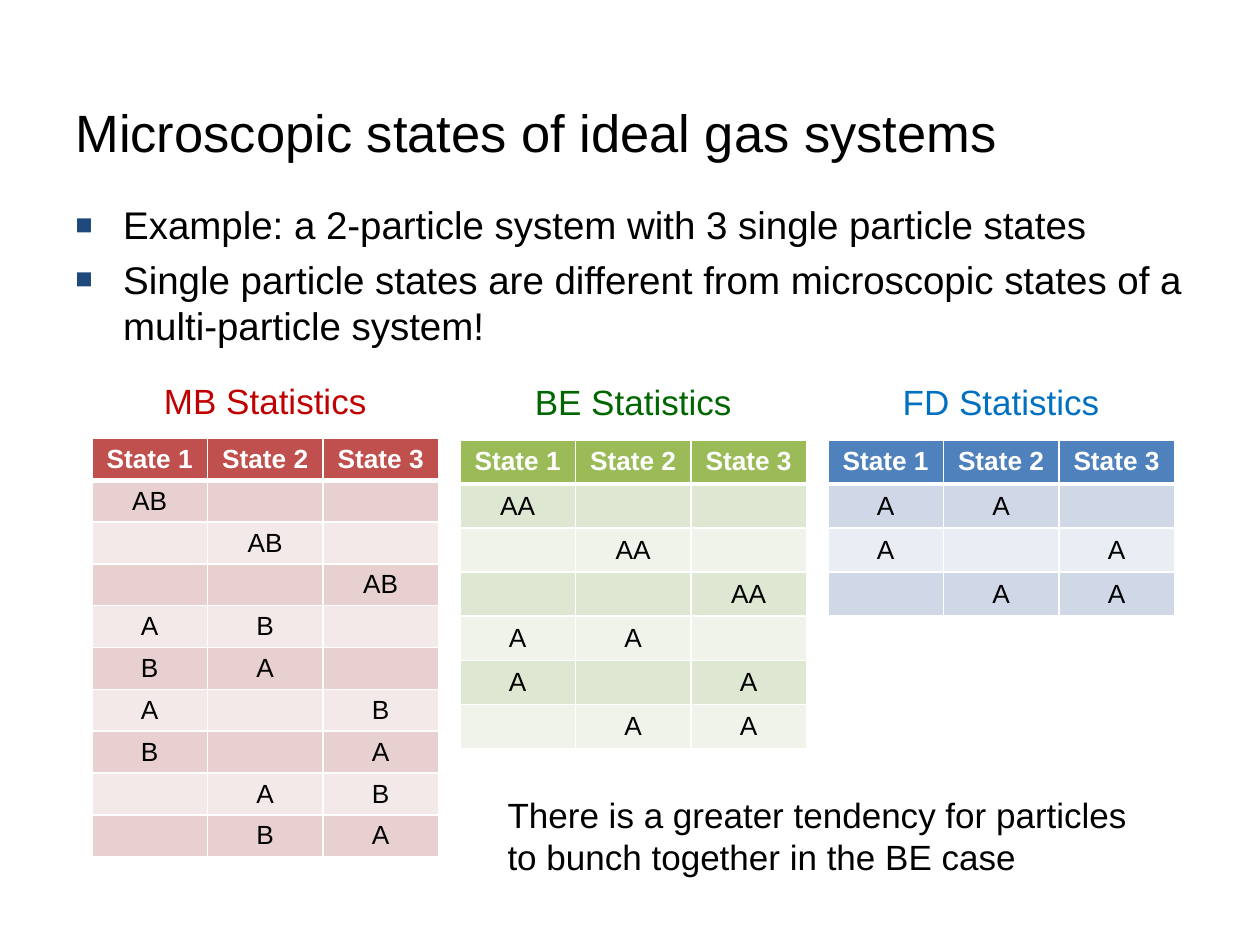
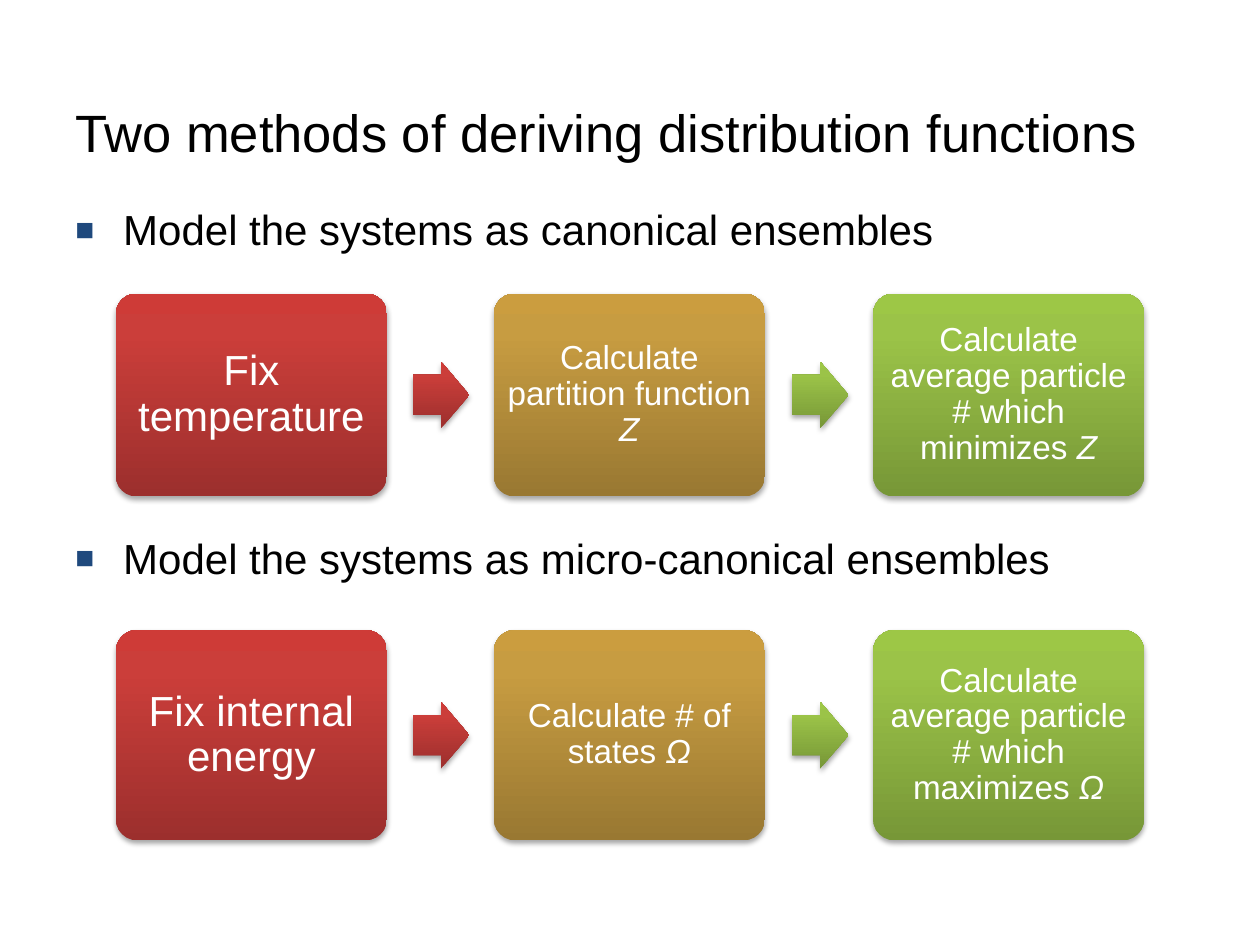
from lxml.etree import SubElement
from pptx import Presentation
from pptx.dml.color import RGBColor
from pptx.enum.shapes import MSO_SHAPE
from pptx.enum.text import MSO_ANCHOR, PP_ALIGN
from pptx.oxml import parse_xml
from pptx.oxml.ns import nsdecls, qn
from pptx.util import Inches, Pt

FONT = "Arial"
BLACK = RGBColor(0x00, 0x00, 0x00)
WHITE = RGBColor(0xFF, 0xFF, 0xFF)
BULLET_BLUE = RGBColor(0x1F, 0x49, 0x7D)
MB_RED = RGBColor(0xC0, 0x00, 0x00)
BE_GREEN = RGBColor(0x00, 0x66, 0x00)
FD_BLUE = RGBColor(0x00, 0x70, 0xC0)
# Table colours: header, odd rows, even rows
RED_BANDS = (RGBColor(0xC0, 0x50, 0x4D), RGBColor(0xE8, 0xD0, 0xD0), RGBColor(0xF4, 0xE9, 0xE9))
GREEN_BANDS = (RGBColor(0x9B, 0xBB, 0x59), RGBColor(0xDE, 0xE7, 0xD1), RGBColor(0xEF, 0xF3, 0xEA))
BLUE_BANDS = (RGBColor(0x4F, 0x81, 0xBD), RGBColor(0xD0, 0xD8, 0xE8), RGBColor(0xE9, 0xED, 0xF4))
# Gradient colours from bottom to top, at 0, 80 and 100 percent
RED_STEP = (RGBColor(0x9C, 0x2F, 0x2D), RGBColor(0xCB, 0x3E, 0x3A), RGBColor(0xCE, 0x3B, 0x37))
GOLD_STEP = (RGBColor(0x99, 0x78, 0x32), RGBColor(0xC7, 0x9C, 0x41), RGBColor(0xCB, 0x9D, 0x3F))
GREEN_STEP = (RGBColor(0x77, 0x97, 0x37), RGBColor(0x9B, 0xC3, 0x48), RGBColor(0x9D, 0xC7, 0x46))


def write(frame, *lines, size, color=BLACK, bold=False, align=PP_ALIGN.LEFT,
          anchor=None, symbol="", bullets=False, gap=0, spacing=None):
    """Fill a frame, one paragraph per line; symbol is an italic ending."""
    frame.word_wrap = True
    if anchor is not None:
        frame.vertical_anchor = anchor
    for number, line in enumerate(lines):
        paragraph = frame.add_paragraph() if number else frame.paragraphs[0]
        paragraph.alignment = align
        if number:
            paragraph.space_before = Pt(gap)
        if spacing:
            paragraph.line_spacing = spacing
        if bullets:
            properties = paragraph._p.get_or_add_pPr()
            properties.set("marL", str(Inches(0.38)))
            properties.set("indent", str(-Inches(0.38)))
            bullet_color = SubElement(properties, qn("a:buClr"))
            SubElement(bullet_color, qn("a:srgbClr"), val=str(BULLET_BLUE))
            SubElement(properties, qn("a:buSzPct"), val="75000")
            SubElement(properties, qn("a:buFont"), typeface=FONT)
            SubElement(properties, qn("a:buChar"), char="■")
        for text, italic in ((line, False), (symbol, True)):
            if text:
                run = paragraph.add_run()
                run.text = text
                font = run.font
                font.name, font.size, font.color.rgb = FONT, Pt(size), color
                font.bold, font.italic = bold, italic


def add_glossy(slide, preset, left, top, width, height, stops, adjustments):
    """Add a preset shape with a vertical gradient and a soft shadow."""
    shape = slide.shapes.add_shape(preset, Inches(left), Inches(top), Inches(width), Inches(height))
    for number, value in enumerate(adjustments):
        shape.adjustments[number] = value
    shape.line.fill.background()
    shape.shadow.inherit = False
    stop_xml = "".join(f'<a:gs pos="{position}"><a:srgbClr val="{color}"/></a:gs>'
                       for position, color in zip((0, 80000, 100000), stops))
    properties = shape._element.spPr
    properties.find(qn("a:prstGeom")).addnext(parse_xml(
        f'<a:gradFill {nsdecls("a")} rotWithShape="1"><a:gsLst>{stop_xml}</a:gsLst>'
        '<a:lin ang="16200000" scaled="0"/></a:gradFill>'))
    properties.find(qn("a:effectLst")).append(parse_xml(
        f'<a:outerShdw {nsdecls("a")} blurRad="{Pt(3.1)}" dist="{Pt(1.8)}" dir="5400000" '
        'rotWithShape="0"><a:srgbClr val="000000"><a:alpha val="35000"/></a:srgbClr></a:outerShdw>'))
    return shape


presentation = Presentation()
presentation.slide_width = Inches(10)
presentation.slide_height = Inches(7.5)

# Titles and bullet points of both slides
outline = [
    ("Microscopic states of ideal gas systems",
     ("Example: a 2-particle system with 3 single particle states",
      "Single particle states are different from microscopic states of a multi-particle system!"),
     22, 1.55, 4.5),
    ("Two methods of deriving distribution functions",
     ("Model the systems as canonical ensembles",
      "Model the systems as micro-canonical ensembles"),
     24, 1.57, 159),
]
slides = []
for title, points, point_size, points_top, point_gap in outline:
    slide = presentation.slides.add_slide(presentation.slide_layouts[6])
    title_box = slide.shapes.add_textbox(Inches(0.5), Inches(0.5), Inches(9), Inches(1.08))
    write(title_box.text_frame, title, size=30, anchor=MSO_ANCHOR.MIDDLE)
    points_box = slide.shapes.add_textbox(Inches(0.5), Inches(points_top), Inches(9), Inches(4.67))
    write(points_box.text_frame, *points, size=point_size, bullets=True, gap=point_gap)
    slides.append(slide)
states_slide, methods_slide = slides

# Slide 1: the states allowed by each kind of statistics
TABLE_WIDTH = 2.75
HEADER = ("State 1", "State 2", "State 3")
MB_STATES = [("AB", "", ""), ("", "AB", ""), ("", "", "AB"),
             ("A", "B", ""), ("B", "A", ""), ("A", "", "B"),
             ("B", "", "A"), ("", "A", "B"), ("", "B", "A")]
FD_STATES = [("A", "A", ""), ("A", "", "A"), ("", "A", "A")]
BE_STATES = [("AA", "", ""), ("", "AA", ""), ("", "", "AA")] + FD_STATES
statistics = [
    ("MB Statistics", MB_RED, RED_BANDS, MB_STATES, 0.73, 3.48, 3.32),
    ("BE Statistics", BE_GREEN, GREEN_BANDS, BE_STATES, 3.65, 3.49, 2.45),
    ("FD Statistics", FD_BLUE, BLUE_BANDS, FD_STATES, 6.57, 3.49, 1.4),
]
for label, label_color, bands, states, left, top, height in statistics:
    label_box = states_slide.shapes.add_textbox(
        Inches(left), Inches(top - 0.52), Inches(TABLE_WIDTH), Inches(0.44))
    write(label_box.text_frame, label, size=20, color=label_color, align=PP_ALIGN.CENTER)

    rows = [HEADER] + states
    table = states_slide.shapes.add_table(
        len(rows), 3, Inches(left), Inches(top), Inches(TABLE_WIDTH), Inches(height)).table
    for row_number, row in enumerate(rows):
        is_header = row_number == 0
        for column, text in enumerate(row):
            cell = table.cell(row_number, column)
            cell.margin_top = cell.margin_bottom = 0
            cell.margin_left = cell.margin_right = Inches(0.05)
            cell.vertical_anchor = MSO_ANCHOR.MIDDLE
            write(cell.text_frame, text, size=15, bold=is_header,
                  color=WHITE if is_header else BLACK, align=PP_ALIGN.CENTER)
            borders = cell._tc.get_or_add_tcPr()
            for side in ("lnL", "lnR", "lnT", "lnB"):
                thick = (is_header and side == "lnB") or (row_number == 1 and side == "lnT")
                border = SubElement(borders, qn(f"a:{side}"), w=str(Pt(3 if thick else 1)))
                border_fill = SubElement(border, qn("a:solidFill"))
                SubElement(border_fill, qn("a:srgbClr"), val=str(WHITE))
            cell.fill.solid()
            cell.fill.fore_color.rgb = bands[0] if is_header else bands[2 - row_number % 2]

remark = states_slide.shapes.add_textbox(Inches(3.93), Inches(6.25), Inches(5.17), Inches(0.77))
write(remark.text_frame, "There is a greater tendency for particles to bunch together in the BE case",
      size=20)

# Slide 2: the steps of each method
STEP_WIDTH, STEP_PITCH = 2.15, 3.005
ARROW_WIDTH, ARROW_HEIGHT, ARROW_OFFSET = 0.45, 0.53, 2.36
step_styles = [(RED_STEP, 24, 0.05), (GOLD_STEP, 19, 0.03), (GREEN_STEP, 19, 0.03)]
methods = [
    (2.33, 1.61, [("Fix temperature", ""), ("Calculate partition function ", "Z"),
                  ("Calculate average particle # which minimizes ", "Z")]),
    (5, 1.67, [("Fix internal energy", ""), ("Calculate # of states ", "Ω"),
               ("Calculate average particle # which maximizes ", "Ω")]),
]
for top, height, steps in methods:
    for number, ((text, symbol), (stops, size, inset)) in enumerate(zip(steps, step_styles)):
        left = round(0.92 + number * STEP_PITCH, 2)
        if number:
            arrow_stops = step_styles[0 if number == 1 else 2][0]
            add_glossy(methods_slide, MSO_SHAPE.RIGHT_ARROW, left - STEP_PITCH + ARROW_OFFSET,
                       top + (height - ARROW_HEIGHT) / 2, ARROW_WIDTH, ARROW_HEIGHT,
                       arrow_stops, (0.6, 0.5))
        step = add_glossy(methods_slide, MSO_SHAPE.ROUNDED_RECTANGLE, left, top,
                          STEP_WIDTH, height, stops, (0.1,))
        frame = step.text_frame
        frame.margin_left = frame.margin_right = Inches(inset)
        frame.margin_top = frame.margin_bottom = Inches(inset)
        write(frame, text, symbol=symbol, size=size, color=WHITE, align=PP_ALIGN.CENTER,
              anchor=MSO_ANCHOR.MIDDLE, spacing=0.9)

presentation.save("out.pptx")
